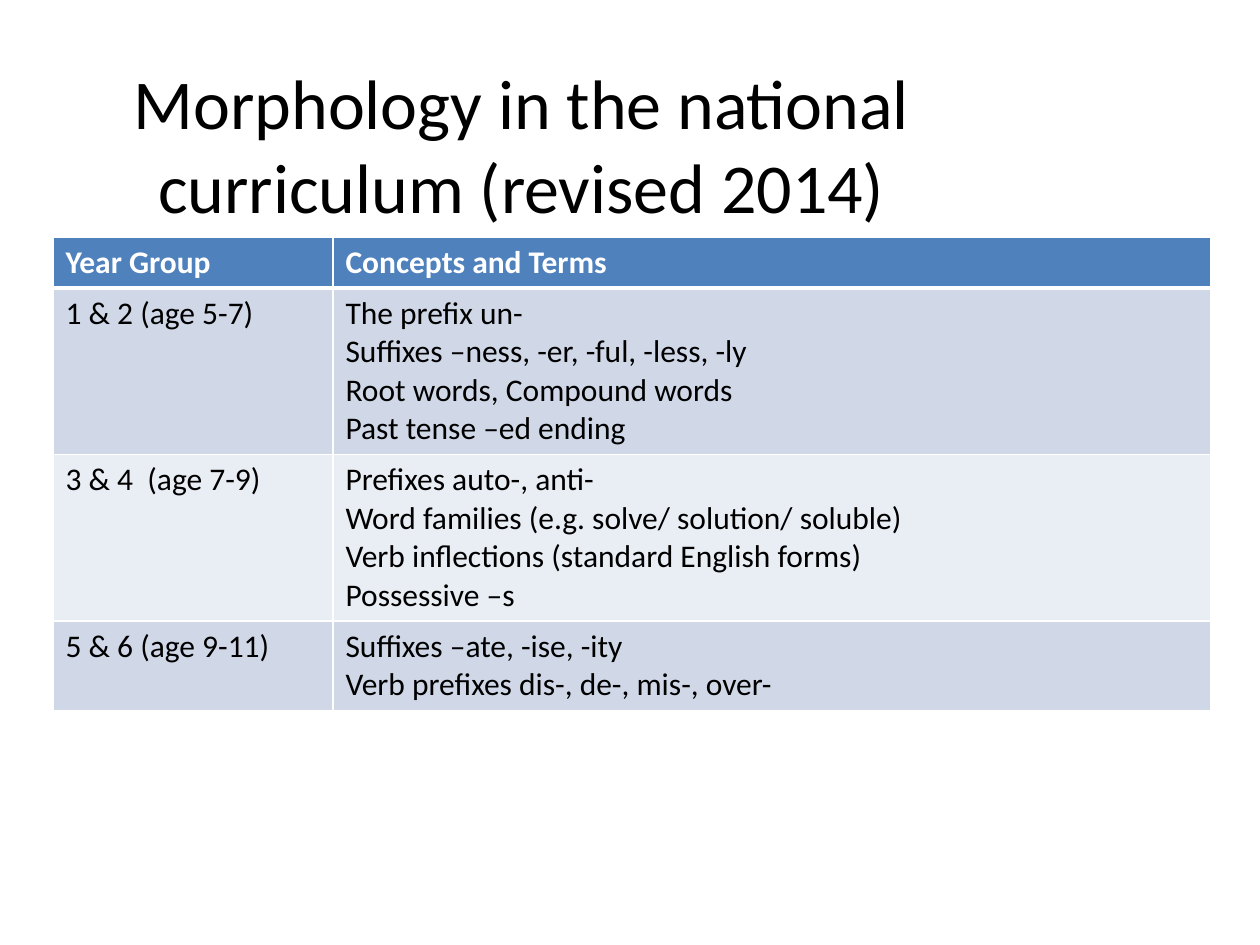
from lxml import etree
from pptx import Presentation
from pptx import util as u
from pptx.dml.color import RGBColor
from pptx.enum import text
from pptx.oxml.ns import qn

PX = 914400 / 126
FONT = "Calibri"
COLORS = {
    "header": "4F81BD",
    "band_dark": "D0D8E8",
    "band_light": "E9EDF4",
    "white": "FFFFFF",
    "black": "000000",
}
TITLE = "Morphology in the national curriculum (revised 2014)"
COLUMNS = [280, 878]
ROWS = [
    (51, "Year Group", ["Concepts and Terms"]),
    (166, "1 & 2 (age 5-7)", [
        "The prefix un-",
        "Suffixes –ness, -er, -ful, -less, -ly",
        "Root words, Compound words",
        "Past tense –ed ending",
    ]),
    (166, "3 & 4  (age 7-9)", [
        "Prefixes auto-, anti-",
        "Word families (e.g. solve/ solution/ soluble)",
        "Verb inflections (standard English forms)",
        "Possessive –s",
    ]),
    (89, "5 & 6 (age 9-11)", [
        "Suffixes –ate, -ise, -ity",
        "Verb prefixes dis-, de-, mis-, over-",
    ]),
]


def px(n):
    return u.Emu(round(n * PX))


def rgb(name):
    return RGBColor.from_string(COLORS[name])


def set_font(p, size, color, bold=False):
    p.font.name = FONT
    p.font.size = u.Pt(size)
    p.font.bold = bold
    p.font.color.rgb = rgb(color)


def add_title(s, x, y, w, h):
    sp = s.shapes.title
    sp.left, sp.top, sp.width, sp.height = map(px, (x, y, w, h))
    tf = sp.text_frame
    tf.word_wrap = True
    tf.auto_size = text.MSO_AUTO_SIZE.NONE
    tf.vertical_anchor = text.MSO_ANCHOR.TOP
    tf.margin_top = px(10)
    tf.text = TITLE
    p = tf.paragraphs[0]
    p.alignment = text.PP_ALIGN.CENTER
    set_font(p, 40, "black")


def set_borders(cell, widths):
    tc_pr = cell._tc.get_or_add_tcPr()
    for side, width in widths.items():
        ln = etree.SubElement(tc_pr, qn(f"a:ln{side}"), w=str(u.Pt(width)))
        fill = etree.SubElement(ln, qn("a:solidFill"))
        etree.SubElement(fill, qn("a:srgbClr"), val=COLORS["white"])


def fill_cell(cell, lines, row):
    header = row == 0
    set_borders(cell, {"L": 1, "R": 1, "T": 3 if row == 1 else 1, "B": 3 if header else 1})
    cell.fill.solid()
    band = "band_dark" if row % 2 else "band_light"
    cell.fill.fore_color.rgb = rgb("header" if header else band)
    cell.text = "\n".join(lines)
    for p in cell.text_frame.paragraphs:
        set_font(p, 18, "white" if header else "black", header)


def add_curriculum_table(s, x, y):
    heights = [row[0] for row in ROWS]
    table = s.shapes.add_table(
        len(ROWS), len(COLUMNS), px(x), px(y), px(sum(COLUMNS)), px(sum(heights))
    ).table
    for column, width in zip(table.columns, COLUMNS):
        column.width = px(width)
    for i, (height, years, concepts) in enumerate(ROWS):
        table.rows[i].height = px(height)
        fill_cell(table.cell(i, 0), [years], i)
        fill_cell(table.cell(i, 1), concepts, i)


def main():
    prs = Presentation()
    prs.slide_width, prs.slide_height = px(1260), px(945)
    s = prs.slides.add_slide(prs.slide_layouts[5])
    add_curriculum_table(s, 53, 237)
    add_title(s, 53, 49, 937, 145)
    prs.save("out.pptx")


if __name__ == "__main__":
    main()
